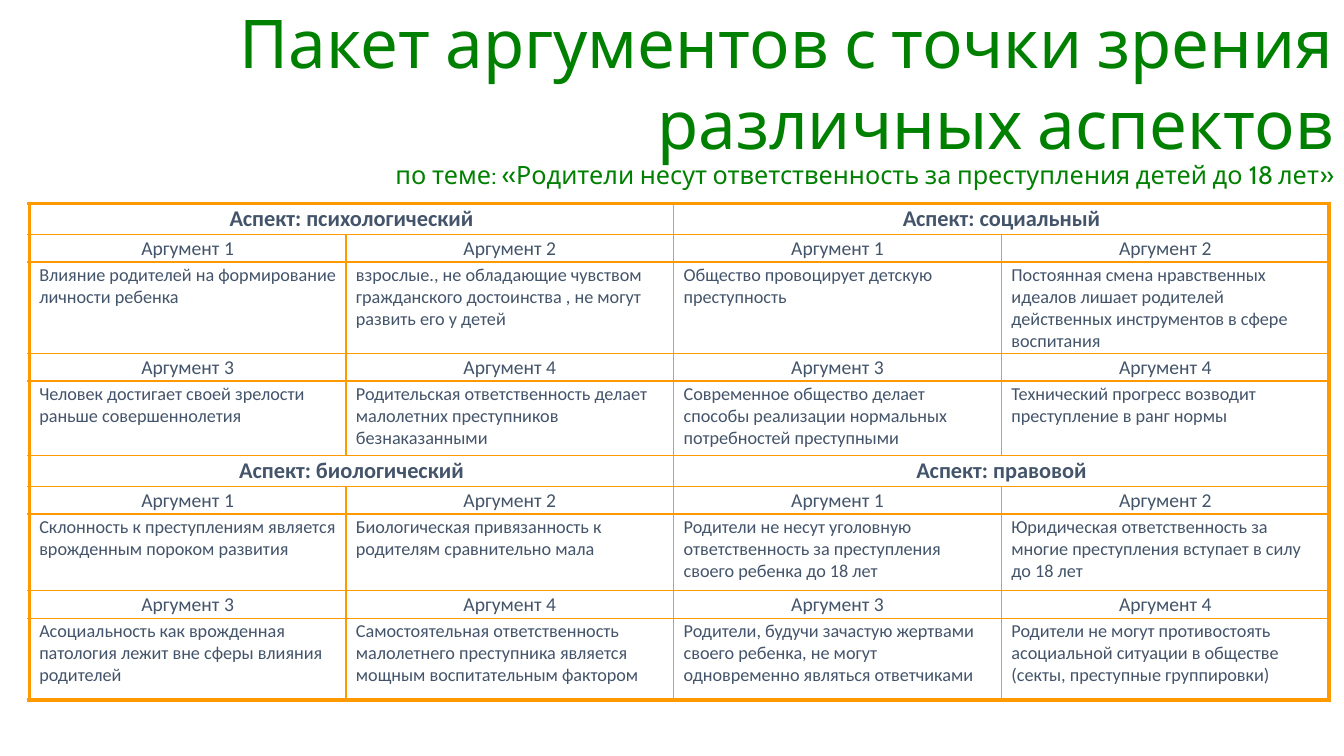
from lxml import etree
from pptx import Presentation
from pptx import util as u
from pptx.dml.color import RGBColor
from pptx.enum import text
from pptx.oxml import ns

GREEN = RGBColor(0x00, 0x80, 0x00)
SLATE = RGBColor(0x44, 0x54, 0x6A)
ORANGE = RGBColor(0xFF, 0x99, 0x00)

COLS = [7.98, 8.26, 8.26, 8.26]
HEAD, LABEL = 0.74, 0.66
# Each band: two aspects, then two pairs of (row height, four arguments)
BANDS = [
    (("психологический", "социальный"), [
        (2.29, [
            "Влияние родителей на формирование личности ребенка",
            "взрослые., не обладающие чувством гражданского достоинства , не могут развить его у детей",
            "Общество провоцирует детскую преступность",
            "Постоянная смена нравственных идеалов лишает родителей действенных инструментов в сфере воспитания"]),
        (1.88, [
            "Человек достигает своей зрелости раньше совершеннолетия",
            "Родительская ответственность делает малолетних преступников безнаказанными",
            "Современное общество делает способы реализации нормальных потребностей преступными",
            "Технический прогресс возводит преступление в ранг нормы"])]),
    (("биологический", "правовой"), [
        (1.93, [
            "Склонность к преступлениям является врожденным пороком развития",
            "Биологическая привязанность к родителям сравнительно мала",
            "Родители не несут уголовную ответственность за преступления своего ребенка до 18 лет",
            "Юридическая ответственность за многие преступления вступает в силу до 18 лет"]),
        (2.06, [
            "Асоциальность как врожденная патология лежит вне сферы влияния родителей",
            "Самостоятельная ответственность малолетнего преступника является мощным воспитательным фактором",
            "Родители, будучи зачастую жертвами своего ребенка, не могут одновременно являться ответчиками",
            "Родители не могут противостоять асоциальной ситуации в обществе (секты, преступные группировки)"])]),
]


class Deck:
    title_font = "Cabin"
    body_font = "Calibri"
    thin, thick = 1, 3

    def __init__(self, slide):
        self.slide = slide

    def label(self, frame, words, font, size, color, align, bold=False):
        frame.text = words
        line = frame.paragraphs[0]
        line.alignment = align
        for run in line.runs:
            run.font.name = font
            run.font.size = u.Pt(size)
            run.font.bold = bold
            run.font.color.rgb = color

    def title(self, words, top, height, size):
        box = self.slide.shapes.add_textbox(0, u.Cm(top), u.Cm(33.87), u.Cm(height))
        frame = box.text_frame
        frame.word_wrap = True
        frame.auto_size = text.MSO_AUTO_SIZE.SHAPE_TO_FIT_TEXT
        self.label(frame, words, self.title_font, size, GREEN, text.PP_ALIGN.RIGHT)

    def table(self, left, top, cols, rows):
        """Draw rows given as (height, size, cell texts); two texts span the row in halves."""
        shape = self.slide.shapes.add_table(
            len(rows), len(cols), u.Cm(left), u.Cm(top),
            u.Cm(sum(cols)), u.Cm(sum(row[0] for row in rows)))
        grid = shape.table
        grid.first_row = grid.horz_banding = False
        for col, width in zip(grid.columns, cols):
            col.width = u.Cm(width)
        for r, (height, size, words) in enumerate(rows):
            grid.rows[r].height = u.Cm(height)
            span = len(cols) // len(words)
            for i, word in enumerate(words):
                first, last = i * span, (i + 1) * span - 1
                cell = grid.cell(r, first)
                if span > 1:
                    cell.merge(grid.cell(r, last))
                edges = {"L": first == 0, "R": last == len(cols) - 1,
                         "T": r == 0, "B": r == len(rows) - 1}
                for c in range(first, last + 1):
                    self.frame(grid.cell(r, c), edges)
                align = text.PP_ALIGN.LEFT if size == 13 else text.PP_ALIGN.CENTER
                self.label(cell.text_frame, word, self.body_font, size, SLATE, align, span > 1)

    def frame(self, cell, edges):
        """Set margins, borders and an empty fill; edges tells which sides are thick."""
        cell.margin_left = cell.margin_right = u.Cm(0.25)
        cell.margin_top = cell.margin_bottom = u.Cm(0.05)
        props = cell._tc.get_or_add_tcPr()
        for side, outer in edges.items():
            width = u.Pt(self.thick if outer else self.thin)
            line = etree.SubElement(props, ns.qn("a:ln" + side), w=str(int(width)))
            fill = etree.SubElement(line, ns.qn("a:solidFill"))
            etree.SubElement(fill, ns.qn("a:srgbClr"), val=str(ORANGE))
        cell.fill.background()


def plan():
    """Turn the bands into table rows."""
    rows = []
    for aspects, pairs in BANDS:
        rows.append((HEAD, 16, [f"Аспект: {name}" for name in aspects]))
        for n, (height, words) in enumerate(pairs):
            labels = [f"Аргумент {2 * n + 1}", f"Аргумент {2 * n + 2}"]
            rows += [(LABEL, 14, labels * 2), (height, 13, words)]
    return rows


def main():
    show = Presentation()
    show.slide_width, show.slide_height = u.Cm(33.87), u.Cm(19.05)
    deck = Deck(show.slides.add_slide(show.slide_layouts[6]))
    deck.title("Пакет аргументов с точки зрения различных аспектов", -0.08, 4.37, 48)
    deck.table(0.74, 5.13, COLS, plan())
    deck.title("по теме: «Родители несут ответственность за преступления детей до 18 лет»",
               3.89, 1.02, 18)
    show.save("out.pptx")


if __name__ == "__main__":
    main()
